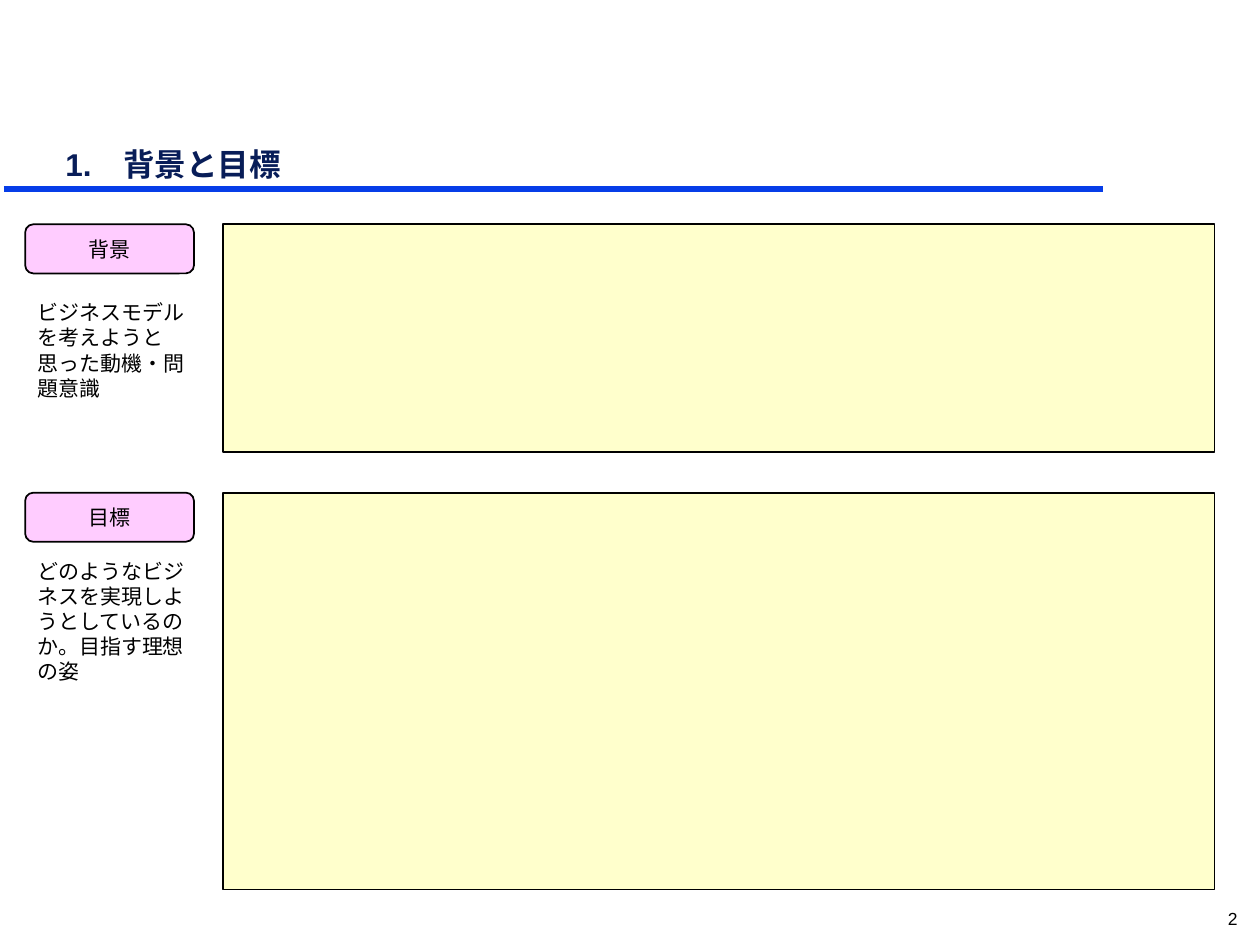
from dataclasses import dataclass

from lxml import etree
from pptx import Presentation
from pptx import util as u
from pptx.dml.color import RGBColor
from pptx.enum import shapes, text
from pptx.oxml.ns import qn

PX = 9144  # EMU per px, 100 px to the inch


@dataclass(frozen=True)
class Theme:
    font: str = "Arial"
    ink: str = "000000"
    navy: str = "081D58"
    rule: str = "063DE8"
    pink: str = "FFCCFF"
    cream: str = "FFFFCC"
    head: int = 18
    body: int = 12
    foot: int = 10


@dataclass(frozen=True)
class Box:
    left: int
    top: int
    width: int
    height: int

    def emu(self) -> list[int]:
        return [n * PX for n in (self.left, self.top, self.width, self.height)]


@dataclass(frozen=True)
class Section:
    label: str
    hint: str
    top: int
    height: int
    gap: int  # from the section top down to the hint
    depth: int  # height of the hint


THEME = Theme()
SECTIONS = [
    Section("背景", "ビジネスモデルを考えようと思った動機・問題意識", 178, 181, 55, 71),
    Section("目標", "どのようなビジネスを実現しようとしているのか。目指す理想の姿",
            391, 315, 47, 91),
]


def style(para, size: int, color: str, align=text.PP_ALIGN.LEFT, bold: bool = False) -> None:
    para.alignment = align
    font = para.font
    font.name, font.size, font.bold = THEME.font, u.Pt(size), bold
    font.color.rgb = RGBColor.from_string(color)


def write(slide, box: Box, words: str, size: int, color: str = THEME.ink,
          anchor=text.MSO_ANCHOR.TOP, **look) -> None:
    frame = slide.shapes.add_textbox(*box.emu()).text_frame
    frame.word_wrap = True
    frame.vertical_anchor = anchor
    frame.text = words
    style(frame.paragraphs[0], size, color, **look)


def panel(slide, kind, box: Box, fill: str, label: str = "") -> None:
    """Draw an outlined box, with a centred label if there is one."""
    shape = slide.shapes.add_shape(kind, *box.emu())
    shape.shadow.inherit = False
    shape.fill.solid()
    shape.fill.fore_color.rgb = RGBColor.from_string(fill)
    shape.line.color.rgb = RGBColor.from_string(THEME.ink)
    shape.line.width = u.Pt(1)
    if label:
        frame = shape.text_frame
        frame.vertical_anchor = text.MSO_ANCHOR.MIDDLE
        frame.text = label
        style(frame.paragraphs[0], THEME.body, THEME.ink, text.PP_ALIGN.CENTER)


def underline(slide, left: int, right: int, top: int) -> None:
    line = slide.shapes.add_connector(
        shapes.MSO_CONNECTOR.STRAIGHT, left * PX, top * PX, right * PX, top * PX)
    line.line.color.rgb = RGBColor.from_string(THEME.rule)
    line.line.width = u.Pt(4)
    etree.SubElement(line._element.spPr, qn("a:effectLst"))


def draw(slide, part: Section) -> None:
    kinds = shapes.MSO_SHAPE
    panel(slide, kinds.ROUNDED_RECTANGLE, Box(20, part.top, 134, 39), THEME.pink, part.label)
    panel(slide, kinds.RECTANGLE, Box(177, part.top, 787, part.height), THEME.cream)
    write(slide, Box(20, part.top + part.gap, 150, part.depth), part.hint, THEME.body)


def main() -> None:
    deck = Presentation()
    deck.slide_width, deck.slide_height = 1000 * PX, 750 * PX
    slide = deck.slides.add_slide(deck.slide_layouts[6])
    low = text.MSO_ANCHOR.BOTTOM
    underline(slide, 3, 875, 150)
    write(slide, Box(667, 692, 325, 50), "2", THEME.foot, anchor=low,
          align=text.PP_ALIGN.RIGHT)
    write(slide, Box(42, 29, 850, 121), "1.\u3000背景と目標".replace("\u3000", "　"),
          THEME.head, THEME.navy, anchor=low, bold=True)
    for part in SECTIONS:
        draw(slide, part)
    deck.save("out.pptx")


if __name__ == "__main__":
    main()
